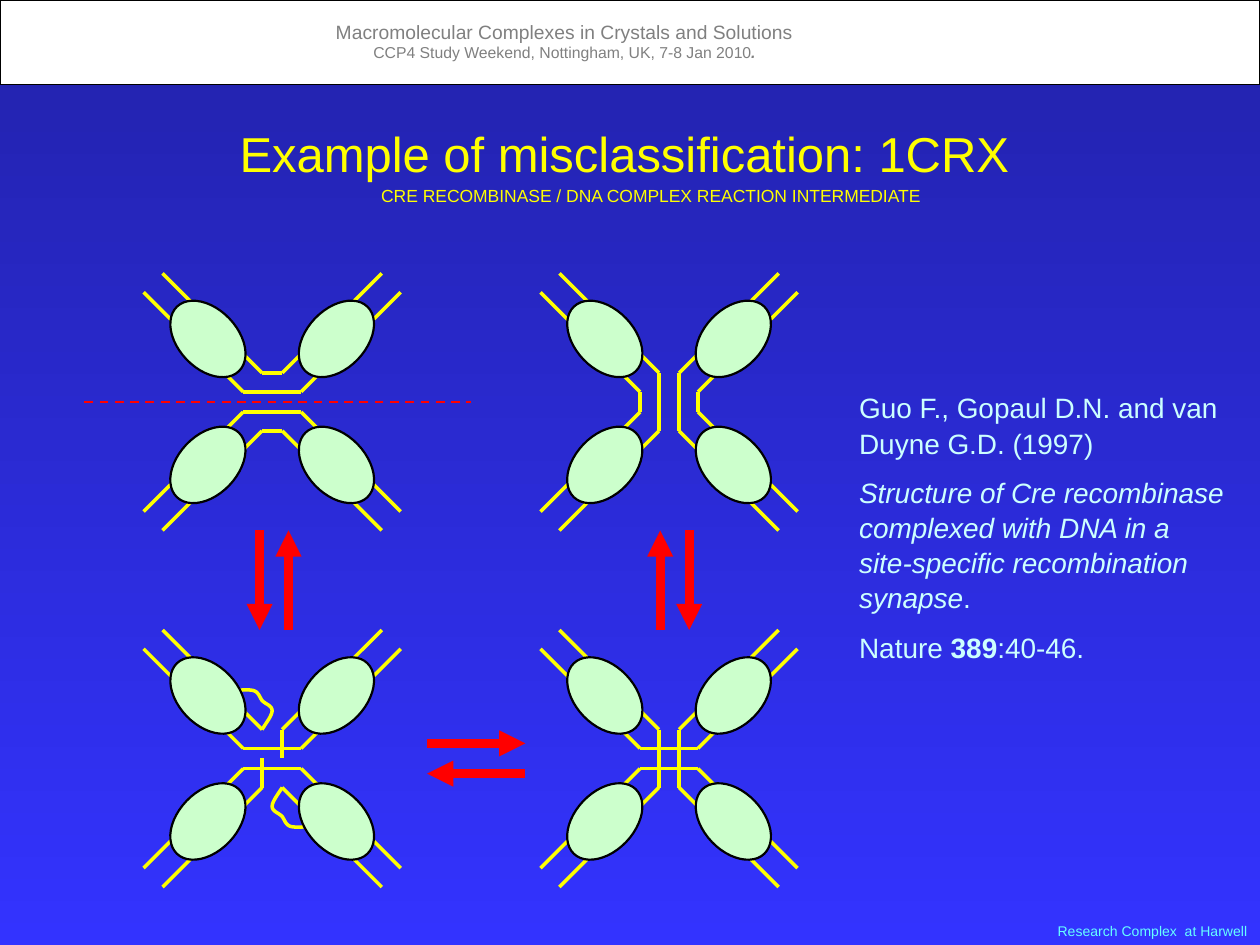
from itertools import product

from lxml import etree
from pptx import Presentation
from pptx.dml.color import RGBColor
from pptx.enum.dml import MSO_LINE
from pptx.enum.shapes import MSO_CONNECTOR, MSO_SHAPE
from pptx.enum.text import MSO_ANCHOR, PP_ALIGN
from pptx.oxml.ns import qn
from pptx.util import Inches, Pt

STRAIGHT = MSO_CONNECTOR.STRAIGHT
RECTANGLE, OVAL = MSO_SHAPE.RECTANGLE, MSO_SHAPE.OVAL
DASH = MSO_LINE.DASH
TOP = MSO_ANCHOR.TOP
LEFT, CENTER, RIGHT = PP_ALIGN.LEFT, PP_ALIGN.CENTER, PP_ALIGN.RIGHT
TITLE_ONLY = 5

YELLOW, RED, GREEN, BLACK = "FFFF00", "FF0000", "CCFFCC", "000000"
GRAY, CYAN, PALE = "808080", "66FFFF", "CCFFFF"

SIDES = (-1, 1)
COLUMNS, ROWS = (2.16, 5.31), (3.19, 6.02)
OUTER, INNER = 0.23, 0.08
HORIZONTAL_OUTER = [(-OUTER, s * INNER, OUTER, s * INNER) for s in SIDES]
HORIZONTAL_INNER = [(-INNER, s * OUTER, INNER, s * OUTER) for s in SIDES]
VERTICAL_OUTER = [(s * INNER, -OUTER, s * INNER, OUTER) for s in SIDES]
VERTICAL_INNER = [(s * OUTER, -INNER, s * OUTER, INNER) for s in SIDES]
CUT_STRANDS = [(s * INNER, -s * OUTER, s * INNER, 0) for s in SIDES]
LOOP = [(0.08, 0.23), (0.05, 0.28), (0, 0.34), (0, 0.38), (0, 0.42),
        (0.05, 0.43), (0.08, 0.46), (0.1, 0.49), (0.11, 0.53), (0.15, 0.54),
        (0.19, 0.55), (0.28, 0.54), (0.31, 0.54)]


def rgb(color):
    """Turn a hex string into a colour."""
    return RGBColor.from_string(color)


def curve_points(controls, steps=8):
    """Sample a chain of cubic Bezier curves."""
    points = [controls[0]]
    for start in range(0, len(controls) - 1, 3):
        a, b, c, d = controls[start:start + 4]
        for step in range(1, steps + 1):
            t = step / steps
            weights = (1 - t) ** 3, 3 * t * (1 - t) ** 2, 3 * t * t * (1 - t), t ** 3
            points.append(tuple(sum(w * p[axis] for w, p in zip(weights, (a, b, c, d)))
                                for axis in (0, 1)))
    return points


class SlideBuilder:
    """Holds the style and the slide being built."""

    def __init__(self, slide, font="Arial", strand_width=2, outline_width=1.25):
        """Keep the slide and the shared style."""
        self.slide = slide
        self.shapes = slide.shapes
        self.font = font
        self.strand_width = strand_width
        self.outline_width = outline_width

    def background(self, top, bottom):
        """Fill the slide with a vertical gradient."""
        fill = self.slide.background.fill
        fill.gradient()
        fill.gradient_angle = 270
        for stop, color, position in zip(fill.gradient_stops, (top, bottom), (0, 1)):
            stop.color.rgb = rgb(color)
            stop.position = position

    def group(self):
        """Add a group and return its shapes."""
        return self.shapes.add_group_shape().shapes

    def line(self, shapes, ends, color=YELLOW, width=None, dash=None, arrow=False):
        """Add a straight line, dashed or with an arrowhead if asked."""
        connector = shapes.add_connector(STRAIGHT, *map(Inches, ends))
        connector.line.color.rgb = rgb(color)
        connector.line.width = Pt(width or self.strand_width)
        if dash:
            connector.line.dash_style = dash
        properties = connector._element.spPr
        if arrow:
            etree.SubElement(properties.find(qn("a:ln")), qn("a:tailEnd"), type="triangle")
        etree.SubElement(properties, qn("a:effectLst"))

    def solid(self, shapes, kind, box, fill, width, rotation=0):
        """Add a filled, black-outlined shape."""
        shape = shapes.add_shape(kind, *map(Inches, box))
        shape.shadow.inherit = False
        shape.rotation = rotation
        shape.fill.solid()
        shape.fill.fore_color.rgb = rgb(fill)
        shape.line.color.rgb = rgb(BLACK)
        shape.line.width = Pt(width)

    def loop(self, shapes, points):
        """Add an open, unfilled strand loop."""
        (x, y), *rest = points
        builder = shapes.build_freeform(Inches(x), Inches(y))
        builder.add_line_segments([(Inches(px), Inches(py)) for px, py in rest], close=False)
        strand = builder.convert_to_shape()
        strand.shadow.inherit = False
        strand.fill.background()
        strand.line.color.rgb = rgb(YELLOW)
        strand.line.width = Pt(self.strand_width)

    def complex(self, cx, cy, links, looped=False):
        """Add four proteins on their DNA arms around a centre."""
        shapes = self.group()
        corners = list(product(SIDES, SIDES))
        arms = [(sx * far_x, sy * far_y, sx * near_x, sy * near_y)
                for sx, sy in corners
                for far_x, far_y, near_x, near_y in ((1.02, 0.87, OUTER, INNER),
                                                     (0.87, 1.02, INNER, OUTER))]
        for x1, y1, x2, y2 in arms + links:
            self.line(shapes, (cx + x1, cy + y1, cx + x2, cy + y2))
        if looped:
            for side in SIDES:
                self.loop(shapes, [(cx + side * x, cy + side * y)
                                   for x, y in curve_points(LOOP)])
        width, height = 0.71, 0.47
        for sx, sy in corners:
            box = (cx + sx * 0.51 - width / 2, cy + sy * 0.5 - height / 2, width, height)
            self.solid(shapes, OVAL, box, GREEN, self.outline_width, sx * sy * 46.2 % 360)

    def arrow_pair(self, *arrows):
        """Add a pair of opposite reaction arrows."""
        shapes = self.group()
        for ends in arrows:
            self.line(shapes, ends, RED, 5, arrow=True)

    def fill_text(self, frame, paragraphs, color, align, spacing, before=0):
        """Fill a text frame from (text, size, bold, italic) runs."""
        frame.word_wrap = True
        frame.vertical_anchor = TOP
        for index, runs in enumerate(paragraphs):
            paragraph = frame.add_paragraph() if index else frame.paragraphs[0]
            paragraph.alignment = align
            paragraph.line_spacing = spacing
            paragraph.space_before = Pt(before if index else 0)
            for text, size, bold, italic in runs:
                run = paragraph.add_run()
                run.text = text
                run.font.name = self.font
                run.font.size = Pt(size)
                run.font.bold = bold
                run.font.italic = italic
                run.font.color.rgb = rgb(color)

    def text(self, box, paragraphs, color, align=LEFT, spacing=1.05, before=0):
        """Add a text box."""
        frame = self.shapes.add_textbox(*map(Inches, box)).text_frame
        self.fill_text(frame, paragraphs, color, align, spacing, before)

    def title(self, box, text, size, color):
        """Place and fill the title placeholder."""
        title = self.shapes.title
        title.left, title.top, title.width, title.height = map(Inches, box)
        self.fill_text(title.text_frame, [[(text, size, False, False)]], color, CENTER, 1.05)


def main():
    """Build the slide and save it."""
    deck = Presentation()
    deck.slide_width, deck.slide_height = Inches(10), Inches(7.5)
    page = SlideBuilder(deck.slides.add_slide(deck.slide_layouts[TITLE_ONLY]))
    page.background("2222AA", "3333FF")

    page.solid(page.shapes, RECTANGLE, (0, 0, 10, 0.67), "FFFFFF", 0.75)
    page.text((1.33, 0.11, 6.3, 0.44), [
        [("Macromolecular Complexes in Crystals and Solutions", 11, False, False)],
        [("CCP4 Study Weekend, Nottingham, UK, 7-8 Jan 2010", 9, False, False),
         (".", 9, True, True)],
    ], GRAY, CENTER, 1)
    page.text((8.2, 7.27, 1.8, 0.23),
              [[("Research Complex  at Harwell", 8, False, False)]], CYAN, RIGHT, 1)
    page.title((0.58, 0.91, 8.75, 0.57), "Example of misclassification: 1CRX", 28, YELLOW)
    page.text((0.58, 1.41, 9.17, 0.27),
              [[("CRE RECOMBINASE / DNA COMPLEX REACTION INTERMEDIATE", 10, False, False)]],
              YELLOW, CENTER)

    left, right = COLUMNS
    upper, lower = ROWS
    page.complex(left, upper, HORIZONTAL_OUTER + HORIZONTAL_INNER)
    page.complex(right, upper, VERTICAL_OUTER + VERTICAL_INNER)
    page.complex(left, lower, HORIZONTAL_OUTER + CUT_STRANDS, looped=True)
    page.complex(right, lower, HORIZONTAL_OUTER + VERTICAL_OUTER)

    page.arrow_pair((2.06, 4.21, 2.06, 5), (2.29, 5, 2.29, 4.21))
    page.arrow_pair((5.24, 5, 5.24, 4.21), (5.47, 4.21, 5.47, 5))
    page.arrow_pair((4.17, 6.14, 3.39, 6.14), (3.39, 5.9, 4.17, 5.9))
    page.line(page.shapes, (0.67, 3.19, 3.74, 3.19), RED, 1.25, dash=DASH)

    page.text((6.72, 3.04, 3.12, 2.35), [
        [("Guo F., Gopaul D.N. and van Duyne G.D. (1997)", 16, False, False)],
        [("Structure of Cre recombinase complexed with DNA in a site-specific "
          "recombination synapse", 16, False, True), (".", 16, False, False)],
        [("Nature ", 16, False, False), ("389", 16, True, False),
         (":40-46.", 16, False, False)],
    ], PALE, before=8)
    deck.save("out.pptx")


if __name__ == "__main__":
    main()
